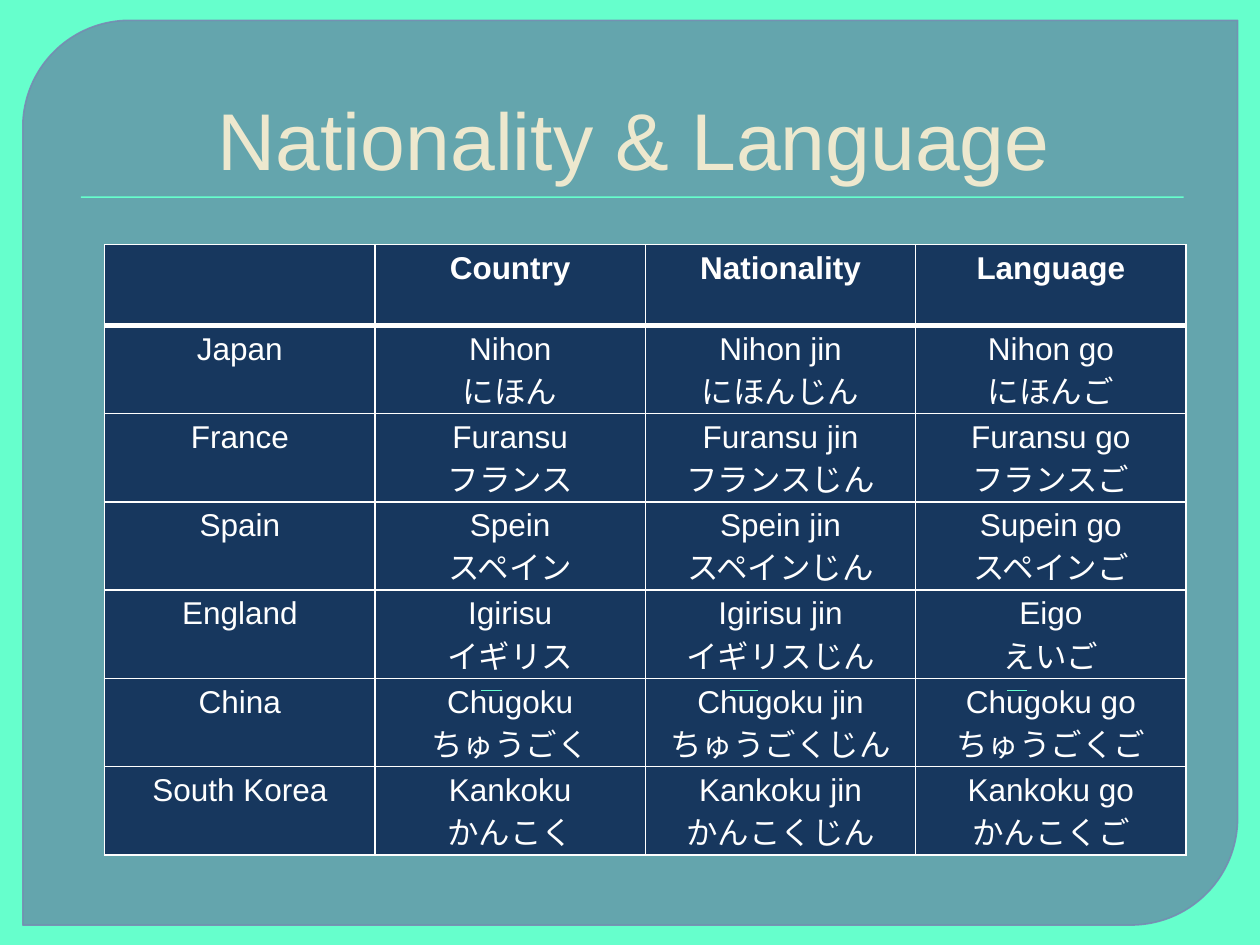
from pptx import Presentation
from pptx import util as u
from pptx.dml import color as dml
from pptx.enum import shapes, text
from pptx.oxml import parse_xml
from pptx.oxml.ns import nsdecls, qn

MINT, NAVY, WHITE = "66FFCC", "17375E", "FFFFFF"
HEADERS = ["", "Country", "Nationality", "Language"]
ROWS = [
    ["Japan", "Nihon\nにほん", "Nihon jin\nにほんじん", "Nihon go\nにほんご"],
    ["France", "Furansu\nフランス", "Furansu jin\nフランスじん", "Furansu go\nフランスご"],
    ["Spain", "Spein\nスペイン", "Spein jin\nスペインじん", "Supein go\nスペインご"],
    ["England", "Igirisu\nイギリス", "Igirisu jin\nイギリスじん", "Eigo\nえいご"],
    ["China", "Chugoku\nちゅうごく", "Chugoku jin\nちゅうごくじん", "Chugoku go\nちゅうごくご"],
    ["South Korea", "Kankoku\nかんこく", "Kankoku jin\nかんこくじん", "Kankoku go\nかんこくご"],
]
ACCENTS = [(7.59, 0.41), (12.6, 0.58), (18.18, 0.41)]
ACCENT_DROP = 8.99


def rgb(value):
    return dml.RGBColor.from_string(value)


def paint(fill, value):
    fill.solid()
    fill.fore_color.rgb = rgb(value)


def set_alpha(properties, percent):
    color = properties.find(qn("a:solidFill"))[0]
    color.append(parse_xml(f'<a:alpha {nsdecls("a")} val="{percent * 1000}"/>'))


def format_text(frame, value, font_format):
    frame.text = value
    for paragraph in frame.paragraphs:
        paragraph.alignment = text.PP_ALIGN.CENTER
        for run in paragraph.runs:
            for name, setting in font_format.items():
                setattr(run.font, name, setting)
            run.font.color.rgb = rgb(WHITE)


def add_border(cell, widths):
    properties = cell._tc.get_or_add_tcPr()
    for index, (side, points) in enumerate(widths.items()):
        properties.insert(index, parse_xml(
            f'<a:ln{side} {nsdecls("a")} w="{u.Pt(points)}"><a:solidFill>'
            f'<a:srgbClr val="{WHITE}"/></a:solidFill></a:ln{side}>'))


def add_panel(slide, left, top, width, height):
    panel = slide.shapes.add_shape(
        shapes.MSO_SHAPE.ROUND_2_DIAG_RECTANGLE,
        u.Cm(left), u.Cm(top), u.Cm(width), u.Cm(height))
    panel.shadow.inherit = False
    panel.adjustments[0] = 0.118
    panel.adjustments[1] = 0
    paint(panel.fill, "63759D")
    paint(panel.line.fill, "7989B3")
    panel.line.width = u.Pt(0.87)
    set_alpha(panel._element.spPr, 65)
    set_alpha(panel.line._get_or_add_ln(), 88)


def add_title(slide, left, top, width, height):
    title = slide.shapes.add_textbox(u.Cm(left), u.Cm(top), u.Cm(width), u.Cm(height))
    frame = title.text_frame
    frame_format = {"word_wrap": True, "vertical_anchor": text.MSO_ANCHOR.BOTTOM,
                    "margin_left": u.Cm(0.4)}
    for name, setting in frame_format.items():
        setattr(frame, name, setting)
    format_text(frame, "Nationality & Language", {"size": u.Pt(46), "name": "Arial"})
    frame.paragraphs[0].runs[0].font.color.rgb = rgb("EDE8CE")
    rule = slide.shapes.add_shape(
        shapes.MSO_SHAPE.RECTANGLE,
        u.Cm(left + 0.36), u.Cm(top + height + 0.07), u.Cm(22.23), u.Cm(0.03))
    rule.shadow.inherit = False
    paint(rule.fill, MINT)
    rule.line.fill.background()


def add_word_table(slide, left, top, width, height):
    records = [HEADERS] + ROWS
    table = slide.shapes.add_table(
        len(records), len(HEADERS),
        u.Cm(left), u.Cm(top), u.Cm(width), u.Cm(height)).table
    for row_index, record in enumerate(records):
        is_header = row_index == 0
        font_format = {"size": u.Pt(18), "name": "Arial", "bold": is_header}
        widths = {"L": 1, "R": 1, "T": 3 if row_index == 1 else 1, "B": 3 if is_header else 1}
        for column_index, value in enumerate(record):
            cell = table.cell(row_index, column_index)
            paint(cell.fill, NAVY)
            add_border(cell, widths)
            if value:
                format_text(cell.text_frame, value, font_format)


def add_accents(slide, left, top):
    y = u.Cm(top + ACCENT_DROP)
    for offset, length in ACCENTS:
        start = left + offset
        accent = slide.shapes.add_connector(
            shapes.MSO_CONNECTOR.STRAIGHT, u.Cm(start), y, u.Cm(start + length), y)
        accent.line.color.rgb = rgb(MINT)
        accent.line.width = u.Pt(0.75)
        accent._element.spPr.append(parse_xml(f'<a:effectLst {nsdecls("a")}/>'))


def main():
    presentation = Presentation()
    presentation.slide_width, presentation.slide_height = u.Cm(25.4), u.Cm(19.05)
    slide = presentation.slides.add_slide(presentation.slide_layouts[6])
    paint(slide.background.fill, MINT)
    add_panel(slide, 0.46, 0.41, 24.49, 18.24)
    add_title(slide, 1.27, 0.71, 22.86, 3.18)
    add_word_table(slide, 2.11, 4.93, 21.8, 11.4)
    add_accents(slide, 2.11, 4.93)
    presentation.save("out.pptx")


if __name__ == "__main__":
    main()
